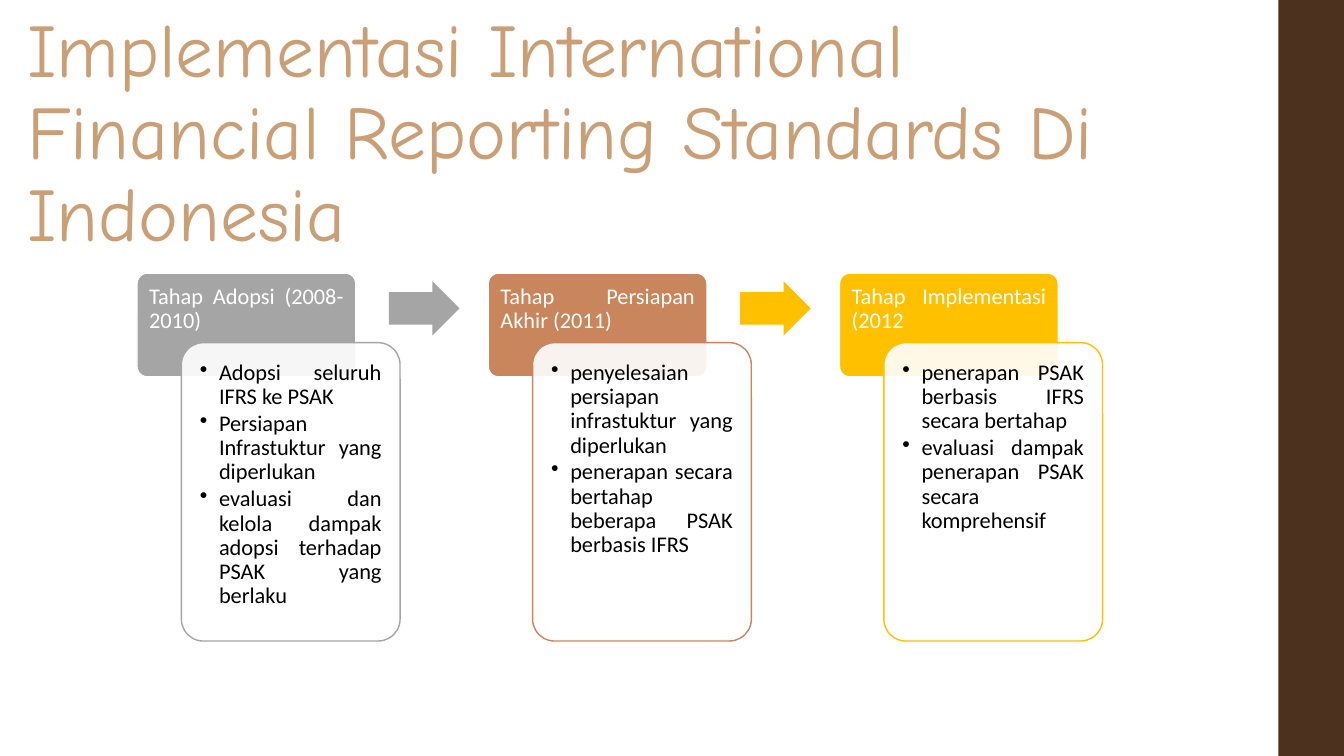
from dataclasses import dataclass

from lxml import etree
from pptx import Presentation
from pptx.dml.color import RGBColor
from pptx.enum.shapes import MSO_SHAPE
from pptx.enum.text import MSO_ANCHOR, MSO_AUTO_SIZE, PP_ALIGN
from pptx.oxml.ns import qn
from pptx.shapes.autoshape import Shape
from pptx.slide import Slide
from pptx.text.text import TextFrame
from pptx.util import Emu, Pt

RECTANGLE = MSO_SHAPE.RECTANGLE
ROUNDED = MSO_SHAPE.ROUNDED_RECTANGLE
ARROW = MSO_SHAPE.RIGHT_ARROW
TOP, MIDDLE = MSO_ANCHOR.TOP, MSO_ANCHOR.MIDDLE
JUSTIFY, LEFT = PP_ALIGN.JUSTIFY, PP_ALIGN.LEFT
GROW = MSO_AUTO_SIZE.SHAPE_TO_FIT_TEXT

EMU_PER_PX = 4572  # 200 px to the inch
SLIDE_W, SLIDE_H = 2667, 1500
BAR_W = 130

# Layout of one stage; the next one is a pitch further right
STAGE_LEFT, STAGE_TOP, STAGE_PITCH = 272, 542, 697
CARD_W, HEADER_H, DETAIL_H = 434, 206, 592
DETAIL_DX, DETAIL_DY = 88, 138
ARROW_DX, ARROW_DY, ARROW_W, ARROW_H = 500, 16, 140, 108
HEADER_INSET, DETAIL_INSET, BULLET_INDENT = 18, 24, 38

WHITE, BLACK = "FFFFFF", "000000"
TITLE_COLOR, BAR_COLOR = "CA9F75", "4D311F"
TITLE = "Implementasi International Financial Reporting Standards Di Indonesia"


@dataclass(frozen=True)
class Stage:
    heading: str
    color: str
    details: tuple[str, ...]


STAGES = (
    Stage("Tahap Adopsi (2008-2010)", "A5A5A5", (
        "Adopsi seluruh IFRS ke PSAK",
        "Persiapan Infrastuktur yang diperlukan",
        "evaluasi dan kelola dampak adopsi terhadap PSAK yang berlaku",
    )),
    Stage("Tahap Persiapan Akhir (2011)", "C9855C", (
        "penyelesaian persiapan infrastuktur yang diperlukan",
        "penerapan secara bertahap beberapa PSAK berbasis IFRS",
    )),
    Stage("Tahap Implementasi (2012", "FFC000", (
        "penerapan PSAK berbasis IFRS secara bertahap",
        "evaluasi dampak penerapan PSAK secara komprehensif",
    )),
)


def px(length: int) -> Emu:
    return Emu(length * EMU_PER_PX)


def rgb(color: str) -> RGBColor:
    return RGBColor.from_string(color)


def add_box(slide: Slide, preset: MSO_SHAPE, left: int, top: int, width: int,
            height: int, fill: str, line: str = "") -> Shape:
    box = slide.shapes.add_shape(preset, px(left), px(top), px(width), px(height))
    box.shadow.inherit = False
    box.fill.solid()
    box.fill.fore_color.rgb = rgb(fill)
    if line:
        box.line.color.rgb = rgb(line)
        box.line.width = Pt(1)
    else:
        box.line.fill.background()
    return box


def set_opacity(box: Shape, percent: int) -> None:
    color = box.fill._xPr.find(f"{qn('a:solidFill')}/{qn('a:srgbClr')}")
    etree.SubElement(color, qn("a:alpha"), val=str(percent * 1000))


def write(frame: TextFrame, texts: tuple[str, ...], font: str, size: int,
          color: str, align: PP_ALIGN, bulleted: bool = False) -> None:
    frame.word_wrap = True
    for index, text in enumerate(texts):
        paragraph = frame.paragraphs[0] if index == 0 else frame.add_paragraph()
        paragraph.text = text
        paragraph.alignment = align
        paragraph.line_spacing = 0.9
        if bulleted:
            paragraph.space_after = Pt(2)
            properties = paragraph._p.get_or_add_pPr()
            properties.set("marL", str(px(BULLET_INDENT)))
            properties.set("indent", str(-px(BULLET_INDENT)))
            etree.SubElement(properties, qn("a:buChar"), char="•")
        paragraph.font.name = font
        paragraph.font.size = Pt(size)
        paragraph.font.color.rgb = rgb(color)


def set_insets(frame: TextFrame, inset: int) -> None:
    frame.vertical_anchor = TOP
    frame.margin_left = frame.margin_right = px(inset)
    frame.margin_top = frame.margin_bottom = px(inset)


def add_title(slide: Slide) -> None:
    title = slide.shapes.add_textbox(px(34), px(94), px(2286), px(348))
    frame = title.text_frame
    write(frame, (TITLE,), "Comic Neue", 54, TITLE_COLOR, LEFT)
    frame.vertical_anchor = MIDDLE
    frame.auto_size = GROW


def add_stage(slide: Slide, stage: Stage, left: int) -> None:
    # Heading behind
    header = add_box(slide, ROUNDED, left, STAGE_TOP, CARD_W, HEADER_H,
                     stage.color, WHITE)
    header.adjustments[0] = 0.1
    set_insets(header.text_frame, HEADER_INSET)
    write(header.text_frame, (stage.heading,), "Calibri", 16, WHITE, JUSTIFY)

    # Translucent card with the details in front
    detail = add_box(slide, ROUNDED, left + DETAIL_DX, STAGE_TOP + DETAIL_DY,
                     CARD_W, DETAIL_H, WHITE, stage.color)
    detail.adjustments[0] = 0.1
    set_opacity(detail, 90)
    set_insets(detail.text_frame, DETAIL_INSET)
    write(detail.text_frame, stage.details, "Calibri", 16, BLACK, JUSTIFY,
          bulleted=True)


def add_stage_arrow(slide: Slide, color: str, left: int) -> None:
    arrow = add_box(slide, ARROW, left + ARROW_DX, STAGE_TOP + ARROW_DY,
                    ARROW_W, ARROW_H, color)
    arrow.adjustments[0] = 0.6
    arrow.adjustments[1] = 0.5


def main() -> None:
    deck = Presentation()
    deck.slide_width, deck.slide_height = px(SLIDE_W), px(SLIDE_H)
    slide = deck.slides.add_slide(deck.slide_layouts[6])

    # Title and side bar
    add_title(slide)
    add_box(slide, RECTANGLE, SLIDE_W - BAR_W, 0, BAR_W, SLIDE_H, BAR_COLOR)

    # Stages; each arrow takes the colour of its stage, the second of the third
    arrow_colors = (STAGES[0].color, STAGES[2].color)
    for index, stage in enumerate(STAGES):
        left = STAGE_LEFT + index * STAGE_PITCH
        add_stage(slide, stage, left)
        if index < len(arrow_colors):
            add_stage_arrow(slide, arrow_colors[index], left)

    deck.save("out.pptx")


if __name__ == "__main__":
    main()
